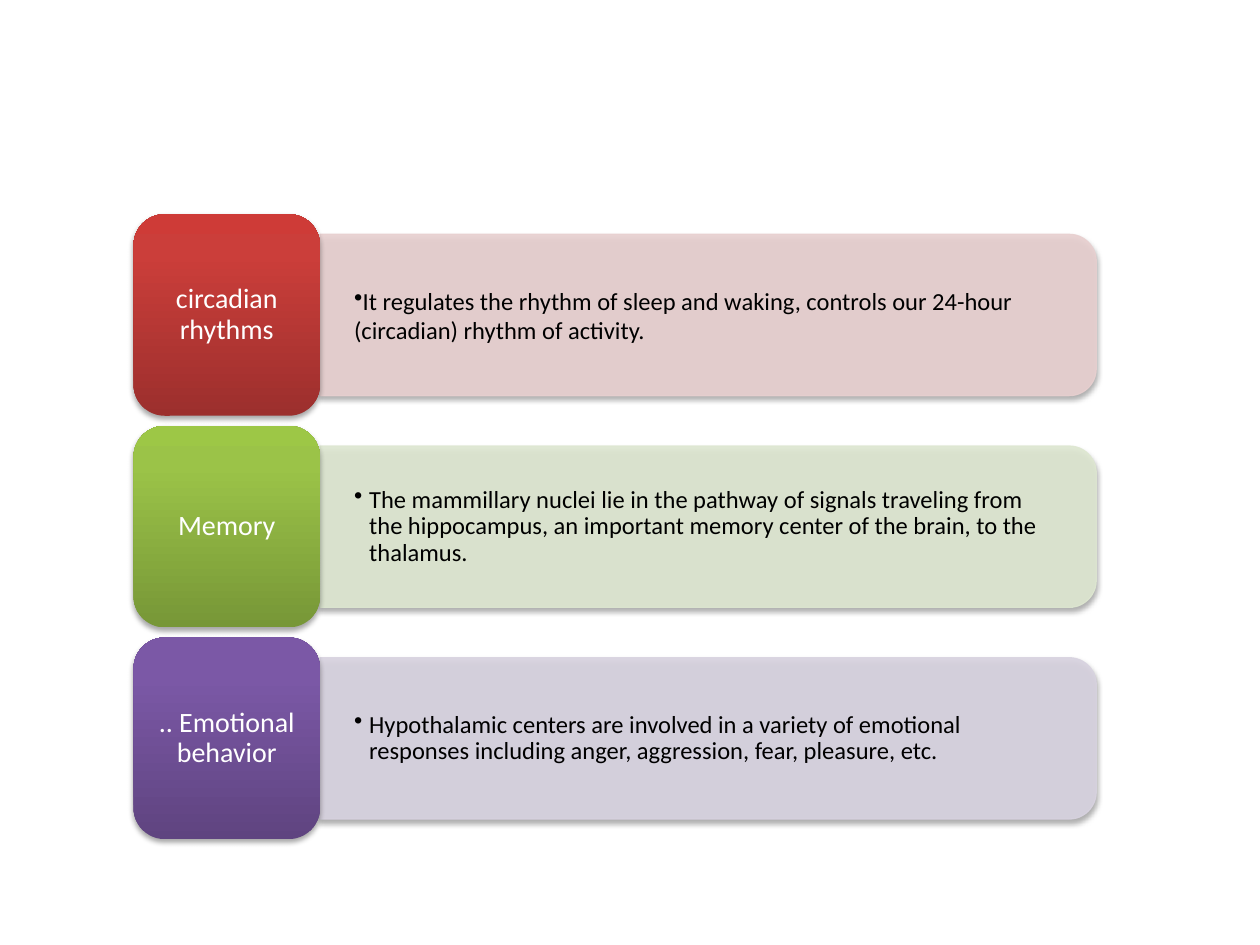
import pptx
import pptx.util
import pptx.oxml
import pptx.oxml.ns
import pptx.dml.color
import pptx.enum.shapes
import pptx.enum.text

Inches = pptx.util.Inches
Shapes = pptx.enum.shapes.MSO_SHAPE
NAMESPACE = pptx.oxml.ns.nsdecls("a")

COLOURS = {
    "text": "000000",
    "label": "FFFFFF",
    "shadow": "000000",
    "red": ("E8D0D0", "9C2F2D", "CB3E3A", "CE3B37"),
    "green": ("DEE7D1", "779737", "9BC348", "9DC746"),
    "purple": ("D8D3E0", "5F4480", "7B58A6", "7C57A8"),
}
ROWS = [
    ("red", "circadian rhythms",
     "It regulates the rhythm of sleep and waking, controls our 24-hour "
     "(circadian) rhythm of activity.", 0, 1.0),
    ("green", "Memory",
     "The mammillary nuclei lie in the pathway of signals traveling from the "
     "hippocampus, an important memory center of the brain, to the thalamus.", 0.12, 0.9),
    ("purple", ".. Emotional behavior",
     "Hypothalamic centers are involved in a variety of emotional responses "
     "including anger, aggression, fear, pleasure, etc.", 0.12, 0.9),
]
FIRST_CENTRE, ROW_PITCH = 2.5, 1.68
TILE_LEFT, TILE_WIDTH, TILE_HEIGHT = 1.06, 1.48, 1.6
PANEL_LEFT, PANEL_WIDTH, PANEL_HEIGHT = TILE_LEFT + TILE_WIDTH, 6.16, 1.28
TEXT_WIDTH, TEXT_HEIGHT = 6.1, 1.15


def rgb(value):
    """Return the colour object for a hex string."""
    return pptx.dml.color.RGBColor.from_string(value)


def place(left, centre, width, height):
    """Return the position and size of a box centred on a row."""
    return [Inches(value) for value in (left, centre - height / 2, width, height)]


def add_shadow(shape):
    """Give a shape a soft shadow that falls straight down."""
    shape.shadow.inherit = False
    effects = shape._element.spPr.find(pptx.oxml.ns.qn("a:effectLst"))
    effects.append(pptx.oxml.parse_xml(
        f'<a:outerShdw {NAMESPACE} blurRad="40000" dist="23000" dir="5400000" rotWithShape="0">'
        f'<a:srgbClr val="{COLOURS["shadow"]}"><a:alpha val="35000"/></a:srgbClr>'
        '</a:outerShdw>'))


def fill_text(box, text, size, colour, margins, spacing):
    """Write one paragraph in a box and return it."""
    frame = box.text_frame
    frame.word_wrap = True
    frame.vertical_anchor = pptx.enum.text.MSO_ANCHOR.MIDDLE
    frame.margin_left = frame.margin_right = Inches(margins[0])
    frame.margin_top = frame.margin_bottom = Inches(margins[1])
    para = frame.paragraphs[0]
    para.text = text
    para.line_spacing = spacing
    para.font.name = "Calibri"
    para.font.size = pptx.util.Pt(size)
    para.font.color.rgb = rgb(colour)
    return para


def add_panel(page, centre, colour):
    """Draw the pale panel, rounded on its right side."""
    middle = PANEL_LEFT + PANEL_WIDTH / 2
    panel = page.shapes.add_shape(
        Shapes.ROUND_2_SAME_RECTANGLE,
        *place(middle - PANEL_HEIGHT / 2, centre, PANEL_HEIGHT, PANEL_WIDTH))
    panel.rotation = 90
    panel.fill.solid()
    panel.fill.fore_color.rgb = panel.line.color.rgb = rgb(colour)
    panel.line.width = pptx.util.Pt(0.75)
    for tone in panel._element.spPr.iter(pptx.oxml.ns.qn("a:srgbClr")):
        tone.append(pptx.oxml.parse_xml(f'<a:alpha {NAMESPACE} val="90000"/>'))
    add_shadow(panel)


def add_description(page, centre, text, indent, spacing):
    """Write the bulleted description over a panel."""
    box = page.shapes.add_textbox(*place(PANEL_LEFT, centre, TEXT_WIDTH, TEXT_HEIGHT))
    para = fill_text(box, text, 14, COLOURS["text"], (0.27, 0.14), spacing)
    para.level = 1
    settings = para._p.get_or_add_pPr()
    settings.set("marL", str(Inches(indent)))
    settings.set("indent", str(-Inches(indent)))
    settings.find(pptx.oxml.ns.qn("a:defRPr")).addprevious(
        pptx.oxml.parse_xml(f'<a:buChar {NAMESPACE} char="•"/>'))


def add_tile(page, centre, label, tones):
    """Draw the shaded tile with its label."""
    tile = page.shapes.add_shape(
        Shapes.ROUNDED_RECTANGLE, *place(TILE_LEFT, centre, TILE_WIDTH, TILE_HEIGHT))
    stops = "".join(
        f'<a:gs pos="{share * 1000}"><a:srgbClr val="{tone}"/></a:gs>'
        for share, tone in zip((0, 80, 100), tones))
    tile._element.spPr.find(pptx.oxml.ns.qn("a:prstGeom")).addnext(pptx.oxml.parse_xml(
        f'<a:gradFill {NAMESPACE} rotWithShape="1"><a:gsLst>{stops}</a:gsLst>'
        '<a:lin ang="16200000" scaled="0"/></a:gradFill>'))
    tile.line.fill.background()
    add_shadow(tile)
    para = fill_text(tile, label, 16, COLOURS["label"], (0.07, 0.03), 0.9)
    para.alignment = pptx.enum.text.PP_ALIGN.CENTER


def main():
    """Build the three labelled rows and save the deck."""
    deck = pptx.Presentation()
    deck.slide_width, deck.slide_height = Inches(10), Inches(7.5)
    page = deck.slides.add_slide(deck.slide_layouts[6])
    for index, (hue, label, text, indent, spacing) in enumerate(ROWS):
        centre = FIRST_CENTRE + index * ROW_PITCH
        pale, *tones = COLOURS[hue]
        add_panel(page, centre, pale)
        add_description(page, centre, text, indent, spacing)
        add_tile(page, centre, label, tones)
    deck.save("out.pptx")


if __name__ == "__main__":
    main()
